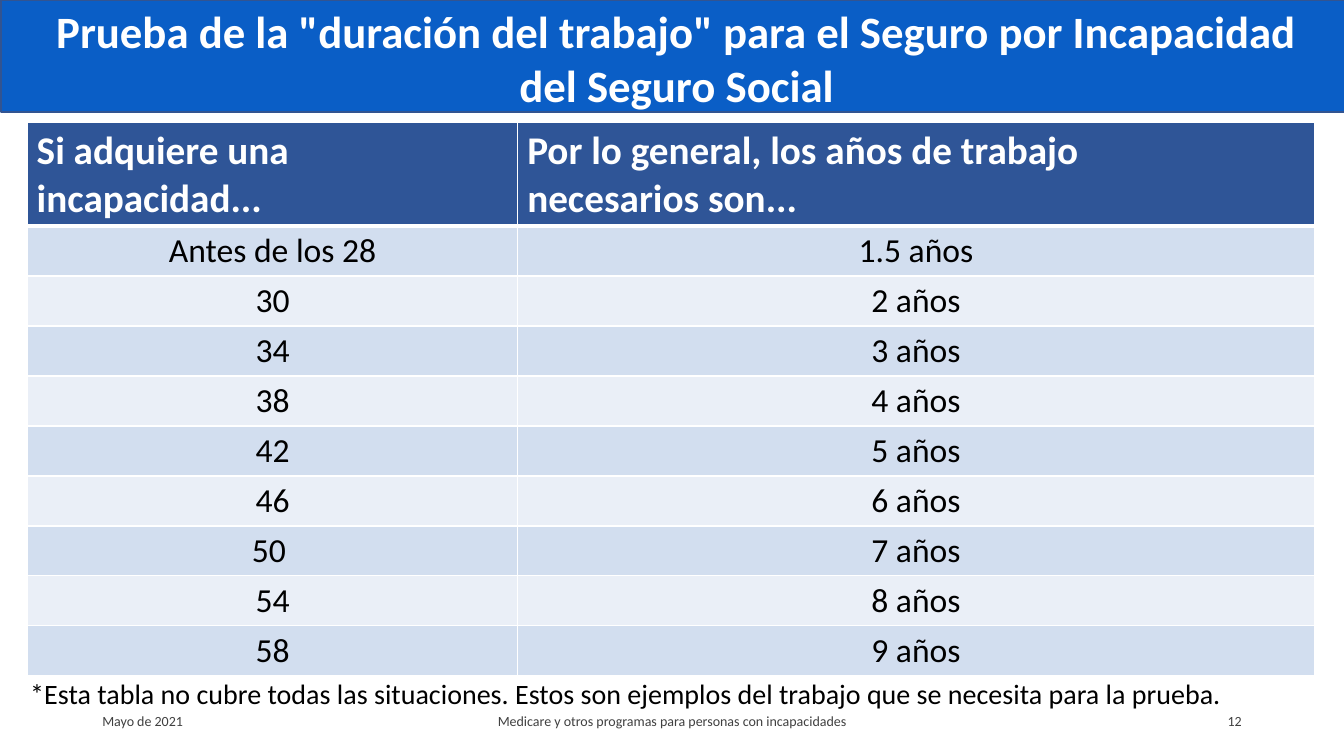
from pptx import Presentation
from pptx.dml.color import RGBColor
from pptx.enum.shapes import MSO_SHAPE as Shape
from pptx.enum.text import MSO_ANCHOR as Anchor, PP_ALIGN as Align
from pptx.oxml import parse_xml
from pptx.oxml.ns import nsdecls
from pptx.util import Pt


def color(value):
    return RGBColor.from_string(value)


def write(frame, text, align, size, ink, bold=False):
    frame.text = text
    frame.word_wrap = True
    for paragraph in frame.paragraphs:
        paragraph.alignment = align
        for run in paragraph.runs:
            font_format = {"name": "Calibri", "size": Pt(size), "bold": bold}
            for name, value in font_format.items():
                setattr(run.font, name, value)
            run.font.color.rgb = color(ink)


presentation = Presentation()
presentation.slide_width = Pt(960)
presentation.slide_height = Pt(540)
slide = presentation.slides.add_slide(presentation.slide_layouts[6])

banner = slide.shapes.add_shape(Shape.RECTANGLE, Pt(0.7), Pt(0), Pt(960), Pt(80))
banner.shadow.inherit = False
banner.fill.solid()
banner.fill.fore_color.rgb = color("0A5EC6")
banner.line.color.rgb = color("325491")
banner.line.width = Pt(1)

title = 'Prueba de la "duración del trabajo" para el Seguro por Incapacidad del Seguro Social'
note = "*Esta tabla no cubre todas las situaciones. Estos son ejemplos del trabajo que se necesita para la prueba."
footer = "Medicare y otros programas para personas con incapacidades"
texts = [
    (title, (27.4, 1, 912, 80.6), Anchor.MIDDLE, Align.CENTER, 32, "FFFFFF", True),
    (note, (14.5, 479.5, 932, 31.5), Anchor.TOP, Align.LEFT, 20, "000000", False),
    ("Mayo de 2021", (66, 500.5, 216, 28.75), Anchor.MIDDLE, Align.LEFT, 10, "404040", False),
    (footer, (318, 500.5, 324, 28.75), Anchor.MIDDLE, Align.CENTER, 10, "404040", False),
    ("12", (678, 500.5, 216, 28.75), Anchor.MIDDLE, Align.RIGHT, 10, "404040", False),
]
for text, box, anchor, align, size, ink, bold in texts:
    shape = slide.shapes.add_textbox(*[Pt(length) for length in box])
    shape.text_frame.vertical_anchor = anchor
    write(shape.text_frame, text, align, size, ink, bold)

ages = ["Antes de los 28", "30", "34", "38", "42", "46", "50 ", "54", "58"]
years = ["1.5"] + [str(number) for number in range(2, 10)]
rows = [("Si adquiere una incapacidad...", "Por lo general, los años de trabajo \vnecesarios son...")]
rows += [(age, f"{year} años") for age, year in zip(ages, years)]

table = slide.shapes.add_table(len(rows), 2, Pt(19.5), Pt(87.8), Pt(919.2), Pt(393.6)).table
for column, width in zip(table.columns, (350.4, 568.8)):
    column.width = Pt(width)

margins = {"margin_left": 6.75, "margin_right": 6.75, "margin_top": 3.25, "margin_bottom": 3.25}
for row_index, values in enumerate(rows):
    header = row_index == 0
    table.rows[row_index].height = Pt(72.3 if header else 35.7)
    fill = "2F5597" if header else ("EAEFF7", "D2DEEF")[row_index % 2]
    borders = {"L": 1, "R": 1, "T": 3 if row_index == 1 else 1, "B": 3 if header else 1}
    for column_index, text in enumerate(values):
        cell = table.cell(row_index, column_index)
        for name, value in margins.items():
            setattr(cell, name, Pt(value))
        if header:
            write(cell.text_frame, text, Align.LEFT, 28, "FFFFFF", True)
        else:
            write(cell.text_frame, text, Align.CENTER, 24, "000000")
        properties = cell._tc.get_or_add_tcPr()
        for side, width in borders.items():
            properties.append(parse_xml(
                f'<a:ln{side} {nsdecls("a")} w="{Pt(width)}"><a:solidFill>'
                f'<a:srgbClr val="FFFFFF"/></a:solidFill></a:ln{side}>'))
        cell.fill.solid()
        cell.fill.fore_color.rgb = color(fill)

presentation.save("out.pptx")
